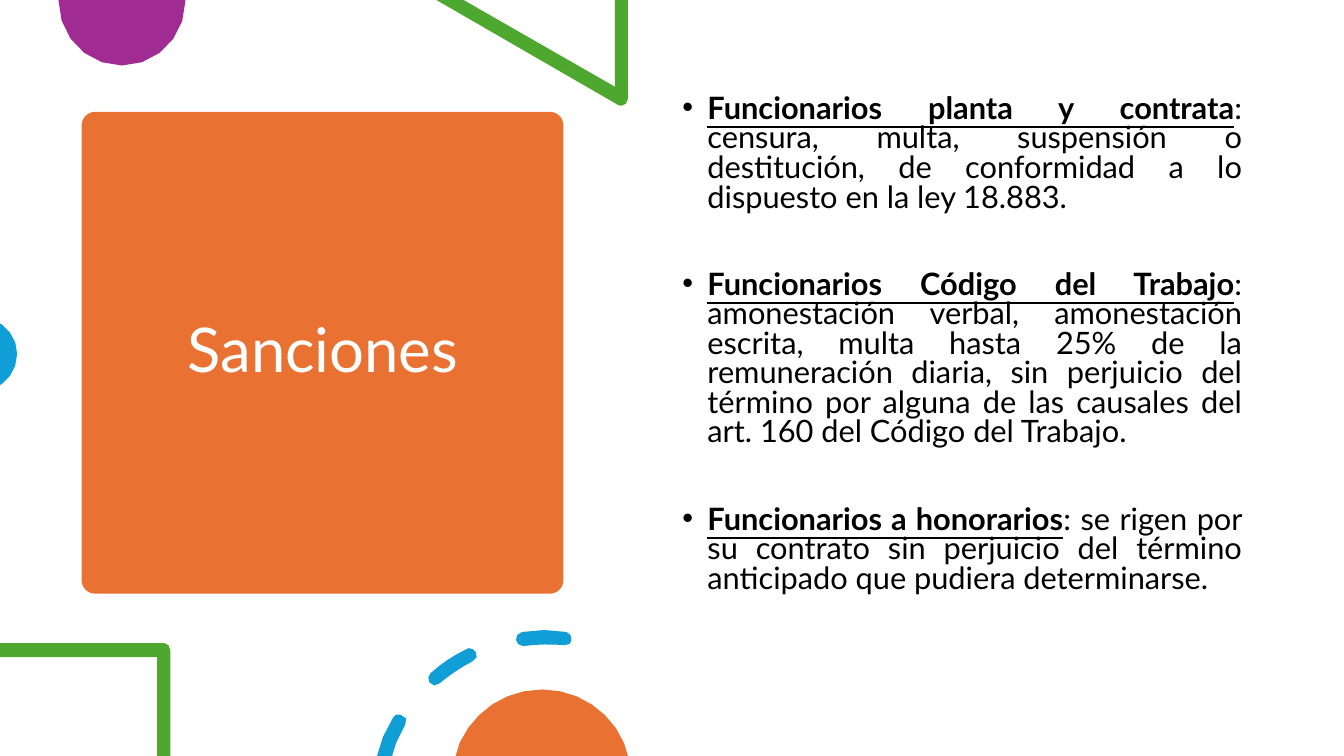
import math

import lxml.etree
import pptx
import pptx.dml.color
import pptx.enum.shapes
import pptx.enum.text
import pptx.oxml.ns
import pptx.util

CELL = pptx.util.Inches(0.01)
SLIDE_WIDTH = pptx.util.Inches(40) // 3
SLIDE_HEIGHT = 750 * CELL
COLORS = {
    "orange": "E97132",
    "purple": "A02B93",
    "green": "4EA72E",
    "blue": "0F9ED5",
    "white": "FFFFFF",
    "black": "000000",
}
ALIGN = pptx.enum.text.PP_ALIGN
ANCHOR = pptx.enum.text.MSO_ANCHOR

SANCTIONS = [
    ("Funcionarios planta y contrata",
     ": censura, multa, suspensión o destitución, de conformidad a lo "
     "dispuesto en la ley 18.883."),
    ("Funcionarios Código del Trabajo",
     ": amonestación verbal, amonestación escrita, multa hasta 25% de la "
     "remuneración diaria, sin perjuicio del término por alguna de las "
     "causales del art. 160 del Código del Trabajo."),
    ("Funcionarios a honorarios",
     ": se rigen por su contrato sin perjuicio del término anticipado que "
     "pudiera determinarse."),
]

# Outlines in grid cells: a pair is a corner, six numbers are a cubic curve.
PURPLE_DISC = [(184, 0), (58, 0), (58, 36, 86, 65, 121, 65),
               (156, 65, 184, 36, 184, 1)]
GREEN_TRIANGLE = [(623, 0), (610, 0), (610, 86), (460, 0), (433, 0), (613, 104),
                  (616, 105), (621, 103), (623, 98)]
BLUE_DISC = [(0, 321), (0, 382), (2, 381), (11, 374, 17, 364, 17, 351),
             (17, 339, 11, 329, 2, 322)]
GREEN_SQUARE = [(163, 638), (0, 638), (0, 652), (156, 652), (156, 750),
                (169, 750), (169, 645), (167, 640)]
LOW_DASH = [(397, 709), (393, 709), (390, 712), (380, 731), (374, 750),
            (389, 750), (393, 737), (402, 719), (403, 713), (399, 710)]
MIDDLE_DASH = [(465, 643), (463, 644), (450, 650, 438, 658, 427, 668),
               (425, 672), (426, 677), (431, 680), (436, 678),
               (446, 670, 457, 662, 469, 656), (473, 652), (472, 647), (469, 644)]
TOP_DASH = [(540, 625), (518, 627), (513, 630), (512, 635), (514, 639), (519, 641),
            (533, 639, 546, 639, 560, 640), (565, 639), (567, 635),
            (566, 630), (562, 627)]
ORANGE_DISC = [(538, 684), (501, 684, 470, 706, 456, 737), (452, 750), (623, 750),
               (619, 737), (606, 706, 574, 684, 538, 684)]


def rgb(name):
    return pptx.dml.color.RGBColor.from_string(COLORS[name])


def flatten(outline):
    """Turn corners and cubic curves into EMU points, more of them on long curves."""
    points = []
    for step in outline:
        if len(step) == 2:
            points.append(step)
            continue
        nodes = [points[-1], step[:2], step[2:4], step[4:]]
        count = round(math.sqrt(math.dist(nodes[0], nodes[3]) / 3))
        for i in range(1, count + 1):
            t = i / count
            weights = ((1 - t) ** 3, 3 * t * (1 - t) ** 2, 3 * t * t * (1 - t), t ** 3)
            points.append(tuple(sum(w * n[axis] for w, n in zip(weights, nodes))
                                for axis in (0, 1)))
    if points[-1] == points[0]:
        points.pop()
    return [(round(x * CELL), round(y * CELL)) for x, y in points]


def add_text(p, text, size=22, color="black", font="Lato", bold=False, underline=False):
    r = p.add_run()
    r.text = text
    r.font.size = pptx.util.Pt(size)
    r.font.name = font
    r.font.bold = bold
    r.font.underline = underline
    r.font.color.rgb = rgb(color)


def add_bullet(p, indent=25):
    pPr = p._p.get_or_add_pPr()
    pPr.set("marL", str(indent * CELL))
    pPr.set("indent", str(-indent * CELL))
    for tag, key, value in (("a:buFont", "typeface", "Arial"), ("a:buChar", "char", "•")):
        lxml.etree.SubElement(pPr, pptx.oxml.ns.qn(tag)).set(key, value)


class Deck:
    """Holds the grid, the style and the current slide."""

    def __init__(self):
        self.prs = pptx.Presentation()
        self.prs.slide_width = SLIDE_WIDTH
        self.prs.slide_height = SLIDE_HEIGHT
        self.s = self.prs.slides.add_slide(self.prs.slide_layouts[6])

    def paint(self, sp, color):
        sp.shadow.inherit = False
        sp.fill.solid()
        sp.fill.fore_color.rgb = rgb(color)
        sp.line.fill.background()

    def card(self, box, color, rounding):
        kind = pptx.enum.shapes.MSO_SHAPE.ROUNDED_RECTANGLE
        sp = self.s.shapes.add_shape(kind, *(n * CELL for n in box))
        sp.adjustments[0] = rounding
        self.paint(sp, color)

    def outline(self, color, *contours):
        first, *others = [flatten(c) for c in contours]
        builder = self.s.shapes.build_freeform(*first[0], scale=1.0)
        builder.add_line_segments(first[1:], close=True)
        for points in others:
            builder.move_to(*points[0])
            builder.add_line_segments(points[1:], close=True)
        self.paint(builder.convert_to_shape(), color)

    def text_box(self, box, anchor):
        tf = self.s.shapes.add_textbox(*(n * CELL for n in box)).text_frame
        tf.word_wrap = True
        tf.vertical_anchor = anchor
        return tf

    def title(self, box, text):
        p = self.text_box(box, ANCHOR.MIDDLE).paragraphs[0]
        p.alignment = ALIGN.CENTER
        p.line_spacing = 0.9
        add_text(p, text, size=44, color="white")

    def bullets(self, box, items):
        tf = self.text_box(box, ANCHOR.TOP)
        for i, (lead, rest) in enumerate(items):
            p = tf.add_paragraph() if i else tf.paragraphs[0]
            p.alignment = ALIGN.JUSTIFY
            p.line_spacing = 0.8
            p.space_before = pptx.util.Pt(41.1 if i else 10)
            add_bullet(p)
            add_text(p, lead, bold=True, underline=True)
            add_text(p, rest)


def main():
    deck = Deck()
    deck.card((81, 111, 478, 478), "orange", 0.028)
    deck.title((105, 122, 431, 456), "Sanciones")
    deck.outline("purple", PURPLE_DISC)
    deck.outline("green", GREEN_TRIANGLE)
    deck.outline("blue", BLUE_DISC)
    deck.bullets((667, 90, 575, 535), SANCTIONS)
    deck.outline("green", GREEN_SQUARE)
    deck.outline("blue", LOW_DASH, MIDDLE_DASH, TOP_DASH)
    deck.outline("orange", ORANGE_DISC)
    deck.prs.save("out.pptx")


if __name__ == "__main__":
    main()
